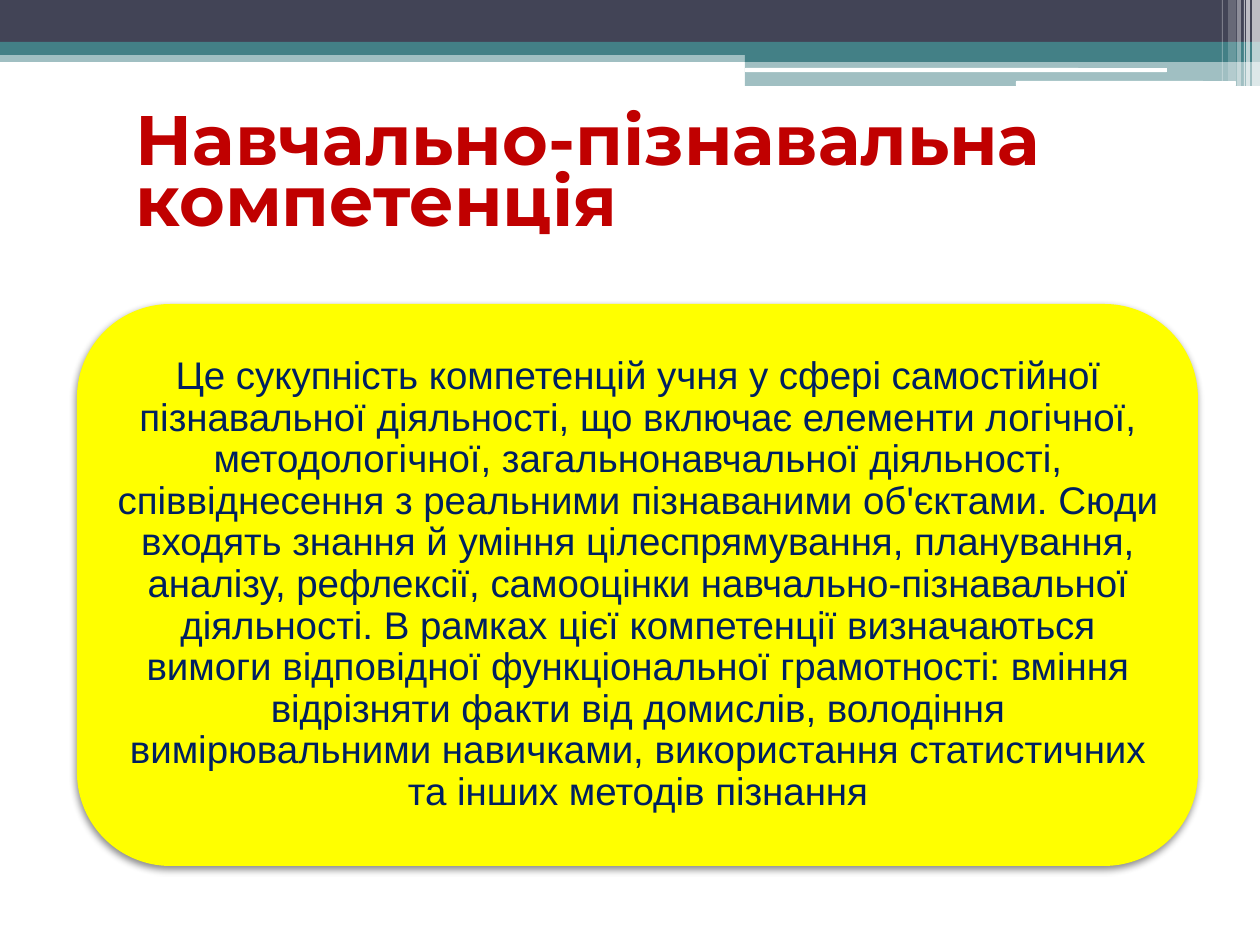
from lxml import etree
from pptx import Presentation
from pptx.dml.color import RGBColor
from pptx.enum.shapes import MSO_SHAPE
from pptx.enum.text import MSO_ANCHOR, MSO_AUTO_SIZE, PP_ALIGN
from pptx.oxml import parse_xml
from pptx.oxml.ns import qn
from pptx.util import Pt

RECTANGLE = MSO_SHAPE.RECTANGLE
ROUNDED = MSO_SHAPE.ROUNDED_RECTANGLE
MIDDLE = MSO_ANCHOR.MIDDLE
PX = 914400 / 126
NAVY, TEAL, WHITE = "424456", "438086", "FFFFFF"


def color(value):
    return RGBColor.from_string(value)


def add_block(shapes, kind, box, fill, opacity=100):
    shape = shapes.add_shape(kind, *[round(length * PX) for length in box])
    shape.shadow.inherit = False
    shape.fill.solid()
    shape.fill.fore_color.rgb = color(fill)
    shape.line.fill.background()
    if opacity < 100:
        fill_color = shape._element.spPr.find(qn("a:solidFill"))[0]
        etree.SubElement(fill_color, qn("a:alpha"), val=str(opacity * 1000))
    return shape


presentation = Presentation()
presentation.slide_width = round(1260 * PX)
presentation.slide_height = round(945 * PX)
slide = presentation.slides.add_slide(presentation.slide_layouts[5])

header_blocks = [
    (RECTANGLE, (0, 50, 1260, 12), TEAL, 50),
    (RECTANGLE, (0, 0, 1260, 42), NAVY, 100),
    (RECTANGLE, (0, 42, 1260, 13), TEAL, 100),
    (RECTANGLE, (745, 49, 515, 13), TEAL, 100),
    (RECTANGLE, (745, 61, 515, 25), TEAL, 50),
    (ROUNDED, (745, 68, 422, 4), WHITE, 100),
    (ROUNDED, (1016, 81, 220, 5), WHITE, 100),
]
for kind, box, fill, opacity in header_blocks:
    add_block(slide.shapes, kind, box, fill, opacity)

header_stripes = [
    (1252, 8, 86, 65),
    (1246, 4, 86, 65),
    (1244, 1, 86, 60),
    (1237, 4, 86, 40),
    (1228, 8, 81, 20),
    (1222, 1, 81, 30),
]
for left, width, height, opacity in header_stripes:
    add_block(slide.shapes, RECTANGLE, (left, 0, width, height), WHITE, opacity)

title = slide.shapes.title
title.left, title.top, title.width, title.height = [
    round(length * PX) for length in (123, 106, 993, 147)
]
title.text_frame.word_wrap = True
title.text_frame.auto_size = MSO_AUTO_SIZE.NONE
title.text_frame.vertical_anchor = MIDDLE
paragraph = title.text_frame.paragraphs[0]
paragraph.alignment = PP_ALIGN.LEFT
paragraph.line_spacing = Pt(35)
run = paragraph.add_run()
run.text = "Навчально-пізнавальна компетенція"
run.font.name = "Montserrat"
run.font.size = Pt(40)
run.font.bold = True
run.font.color.rgb = color("C00000")

definition = slide.shapes.add_group_shape()
panel = add_block(definition.shapes, ROUNDED, (77, 304, 1121, 562), "FFFF00")
effects = panel._element.spPr.find(qn("a:effectLst"))
effects.append(parse_xml(
    '<a:outerShdw xmlns:a="http://schemas.openxmlformats.org/drawingml/2006/main"'
    ' blurRad="50800" dist="25400" dir="5400000" rotWithShape="0">'
    '<a:srgbClr val="000000"><a:alpha val="45000"/></a:srgbClr></a:outerShdw>'
))

text_box = definition.shapes.add_textbox(
    *[round(length * PX) for length in (105, 331, 1066, 508)]
)
text_frame = text_box.text_frame
text_frame.word_wrap = True
text_frame.vertical_anchor = MIDDLE
text_frame.margin_left = text_frame.margin_right = round(11 * PX)
text_frame.margin_top = text_frame.margin_bottom = round(11 * PX)
paragraph = text_frame.paragraphs[0]
paragraph.alignment = PP_ALIGN.CENTER
paragraph.line_spacing = 0.9
run = paragraph.add_run()
run.text = (
    "Це сукупність компетенцій учня у сфері самостійної пізнавальної діяльності, "
    "що включає елементи логічної, методологічної, загальнонавчальної діяльності, "
    "співвіднесення з реальними пізнаваними об'єктами. Сюди входять знання й уміння "
    "цілеспрямування, планування, аналізу, рефлексії, самооцінки "
    "навчально-пізнавальної діяльності. В рамках цієї компетенції визначаються "
    "вимоги відповідної функціональної грамотності: вміння відрізняти факти від "
    "домислів, володіння вимірювальними навичками, використання статистичних "
    "та інших методів пізнання"
)
run.font.name = "Arial"
run.font.size = Pt(22)
run.font.color.rgb = color("002060")

presentation.save("out.pptx")
